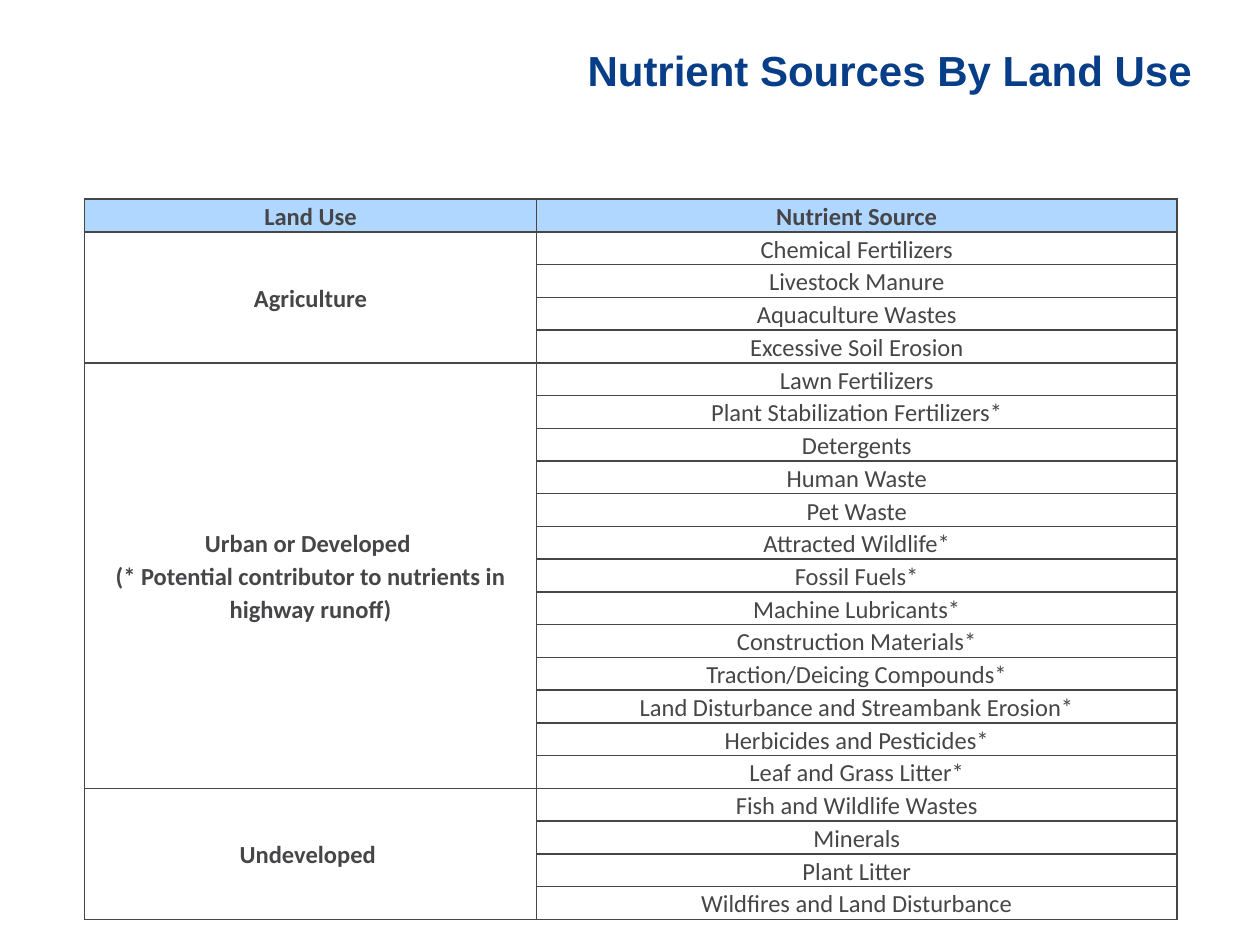
from dataclasses import dataclass

from lxml import etree
from pptx import Presentation
from pptx.dml.color import RGBColor
from pptx.enum.text import MSO_ANCHOR, PP_ALIGN
from pptx.oxml.ns import qn
from pptx.util import Inches, Pt

MIDDLE = MSO_ANCHOR.MIDDLE
CENTER, RIGHT = PP_ALIGN.CENTER, PP_ALIGN.RIGHT
COLORS = {"title": "073E87", "ink": "464648", "header": "B0D7FF"}
SLIDE_WIDTH, SLIDE_HEIGHT = Inches(10), Inches(7.5)
ROW_HEIGHT = Inches(0.26)
COLUMN_WIDTHS = (Inches(3.59), Inches(5.08))
HEADINGS = ("Land Use", "Nutrient Source")


@dataclass(frozen=True)
class LandUse:
    label: str
    sources: tuple[str, ...]


LAND_USES = (
    LandUse("Agriculture", (
        "Chemical Fertilizers", "Livestock Manure",
        "Aquaculture Wastes", "Excessive Soil Erosion",
    )),
    LandUse("Urban or Developed \v(* Potential contributor to nutrients in highway runoff)", (
        "Lawn Fertilizers", "Plant Stabilization Fertilizers*", "Detergents",
        "Human Waste", "Pet Waste", "Attracted Wildlife*", "Fossil Fuels*",
        "Machine Lubricants*", "Construction Materials*",
        "Traction/Deicing Compounds*", "Land Disturbance and Streambank Erosion*",
        "Herbicides and Pesticides*", "Leaf and Grass Litter*",
    )),
    LandUse("Undeveloped ", (
        "Fish and Wildlife Wastes", "Minerals",
        "Plant Litter", "Wildfires and Land Disturbance",
    )),
)


def style_runs(paragraph, font_name: str, size: int, color: str, bold: bool) -> None:
    for run in paragraph.runs:
        run.font.name = font_name
        run.font.size = Pt(size)
        run.font.bold = bold
        run.font.color.rgb = RGBColor.from_string(COLORS[color])


def add_title(slide, text: str) -> None:
    title = slide.shapes.add_textbox(
        Inches(2.38), Inches(0.08), Inches(7.12), Inches(0.94))
    frame = title.text_frame
    frame.word_wrap = True
    frame.vertical_anchor = MIDDLE
    frame.margin_left = frame.margin_right = Inches(0.04)
    frame.margin_top = frame.margin_bottom = Inches(0.04)
    frame.text = text
    frame.paragraphs[0].alignment = RIGHT
    style_runs(frame.paragraphs[0], "Arial", 24, "title", True)


def prepare_cell(cell) -> None:
    cell.vertical_anchor = MIDDLE
    cell.margin_left = cell.margin_right = Inches(0.03)
    cell.margin_top = cell.margin_bottom = 0
    properties = cell._tc.get_or_add_tcPr()
    for side in ("a:lnL", "a:lnR", "a:lnT", "a:lnB"):
        line = etree.SubElement(properties, qn(side), w=str(Pt(1)))
        fill = etree.SubElement(line, qn("a:solidFill"))
        etree.SubElement(fill, qn("a:srgbClr"), val=COLORS["ink"])
    cell.fill.background()


def write_cell(cell, text: str, bold: bool) -> None:
    cell.text_frame.text = text
    paragraph = cell.text_frame.paragraphs[0]
    paragraph.alignment = CENTER
    paragraph.line_spacing = 1.1
    style_runs(paragraph, "Calibri", 14, "ink", bold)


def add_source_table(slide, land_uses: tuple[LandUse, ...]) -> None:
    row_count = 1 + sum(len(use.sources) for use in land_uses)
    table = slide.shapes.add_table(
        row_count, len(COLUMN_WIDTHS), Inches(0.67), Inches(1.58),
        sum(COLUMN_WIDTHS), ROW_HEIGHT * row_count).table
    table.first_row = table.horz_banding = False
    for column, width in zip(table.columns, COLUMN_WIDTHS):
        column.width = width
    for row in table.rows:
        row.height = ROW_HEIGHT
    for cell in table.iter_cells():
        prepare_cell(cell)

    for column, heading in enumerate(HEADINGS):
        cell = table.cell(0, column)
        cell.fill.solid()
        cell.fill.fore_color.rgb = RGBColor.from_string(COLORS["header"])
        write_cell(cell, heading, True)

    first = 1
    for use in land_uses:
        last = first + len(use.sources) - 1
        table.cell(first, 0).merge(table.cell(last, 0))
        write_cell(table.cell(first, 0), use.label, True)
        for row, source in enumerate(use.sources, first):
            write_cell(table.cell(row, 1), source, False)
        first = last + 1


def main() -> None:
    presentation = Presentation()
    presentation.slide_width = SLIDE_WIDTH
    presentation.slide_height = SLIDE_HEIGHT
    slide = presentation.slides.add_slide(presentation.slide_layouts[6])
    add_title(slide, "Nutrient Sources By Land Use")
    add_source_table(slide, LAND_USES)
    presentation.save("out.pptx")


if __name__ == "__main__":
    main()
